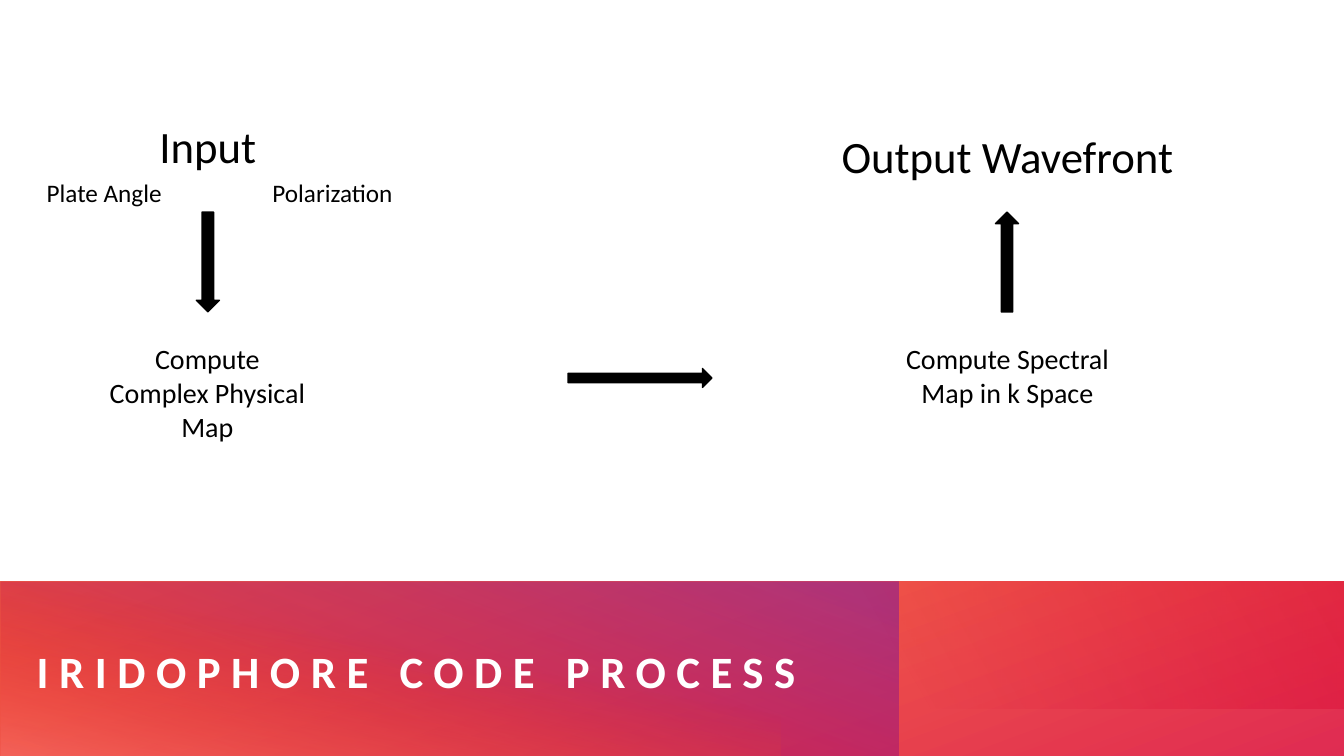
import lxml.etree
import pptx
import pptx.dml.color
import pptx.enum.shapes
import pptx.enum.text
import pptx.oxml.ns
import pptx.util

PX = 9525
RGB = pptx.dml.color.RGBColor
BLACK = RGB(0x00, 0x00, 0x00)
WHITE = RGB(0xFF, 0xFF, 0xFF)
RED = RGB(0xDA, 0x00, 0x2F)
ORANGE = RGB(0xFE, 0x4A, 0x00)
PURPLE = RGB(0x92, 0x24, 0x8E)
PEACH = RGB(0xFF, 0x90, 0x7A)
SHAPE = pptx.enum.shapes.MSO_SHAPE
ALIGN = pptx.enum.text.PP_ALIGN
ANCHOR = pptx.enum.text.MSO_ANCHOR
AUTO = pptx.enum.text.MSO_AUTO_SIZE
qn = pptx.oxml.ns.qn


def assign(obj, values):
    """Set each named attribute on an object."""
    for name, value in values.items():
        setattr(obj, name, value)


def place(s, x, y, w, h):
    """Position a shape from pixel lengths."""
    assign(s, {"left": x * PX, "top": y * PX, "width": w * PX, "height": h * PX})


def add_label(slide, text, x, y, w, h, size, align=ALIGN.CENTER):
    """Add a black wrapped text box."""
    s = slide.shapes.add_textbox(x * PX, y * PX, w * PX, h * PX)
    tf = s.text_frame
    assign(tf, {"word_wrap": True, "text": text})
    p = tf.paragraphs[0]
    p.alignment = align
    r = p.runs[0]
    assign(r.font, {"name": "Calibri", "size": pptx.util.Pt(size)})
    r.font.color.rgb = BLACK


def add_arrow(slide, kind, x, y, w, h, rotation=0):
    """Add a solid black block arrow."""
    s = slide.shapes.add_shape(kind, x * PX, y * PX, w * PX, h * PX)
    s.rotation = rotation
    s.shadow.inherit = False
    s.fill.solid()
    s.fill.fore_color.rgb = BLACK
    s.line.color.rgb = BLACK
    s.line.width = pptx.util.Pt(1)


def add_panel(slide, x, y, w, h, stops, angle, rotation=0, flip=False):
    """Add a translucent gradient panel that covers the given visible box."""
    dx = (w - h) // 2 if rotation in (90, 270) else 0
    s = slide.shapes.add_shape(SHAPE.RECTANGLE, 0, 0, PX, PX)
    place(s, x + dx, y - dx, w - 2 * dx, h + 2 * dx)
    s.rotation = rotation
    s.shadow.inherit = False
    s.fill.gradient()
    s.fill.gradient_angle = 360 - angle
    for stop, (position, color, _) in zip(s.fill.gradient_stops, stops):
        stop.position = position / 100
        stop.color.rgb = color
    spPr = s._element.spPr
    for clr, (_, _, opacity) in zip(spPr.iter(qn("a:srgbClr")), stops):
        alpha = lxml.etree.SubElement(clr, qn("a:alpha"))
        alpha.set("val", str(opacity * 1000))
    if flip:
        spPr.find(qn("a:xfrm")).set("flipH", "1")
    s.line.fill.background()


def add_banner(slide, x, y, w, h):
    """Layer the gradient banner and set the title over it."""
    add_panel(slide, x, y, w, h, [(0, RED, 83), (100, ORANGE, 74)], 250)
    add_panel(slide, x, y, 856, h, [(5, PURPLE, 68), (100, RED, 43)], 160, 90, True)
    add_panel(slide, x, y, 744, h, [(42, ORANGE, 0), (99, PEACH, 48)], 190, 270)
    add_panel(slide, x + 517, y, w - 517, 121, [(0, RED, 37), (56, RED, 0)], 330, 180)
    s = slide.shapes.title
    place(s, x + 35, y + 29, 785, 112)
    tf = s.text_frame
    assign(tf, {"text": "IRIDOPHORE CODE PROCESS", "word_wrap": True,
                "auto_size": AUTO.NONE, "vertical_anchor": ANCHOR.MIDDLE,
                "margin_left": 0, "margin_right": 0,
                "margin_top": 0, "margin_bottom": 0})
    p = tf.paragraphs[0]
    p.alignment = ALIGN.LEFT
    r = p.runs[0]
    assign(r.font, {"name": "Calibri", "size": pptx.util.Pt(32), "bold": True})
    r.font.color.rgb = WHITE
    r._r.get_or_add_rPr().set("spc", "750")
    slide.shapes._spTree.append(s._element)


def add_input(slide, x, y):
    """Add the input column with its two parameters and first step."""
    add_label(slide, "Input", x + 86, y, 154, 61, 32)
    add_label(slide, "Plate Angle", x, y + 56, 133, 38, 18, ALIGN.LEFT)
    add_label(slide, "Polarization", x + 215, y + 56, 147, 38, 18, ALIGN.LEFT)
    add_arrow(slide, SHAPE.DOWN_ARROW, x + 152, y + 94, 22, 95)
    add_label(slide, "Compute Complex Physical Map", x + 55, y + 213, 215, 74, 20)


def add_output(slide, x, y):
    """Add the output column that leads up to the wavefront."""
    add_label(slide, "Output Wavefront", x, y, 337, 61, 32)
    add_arrow(slide, SHAPE.DOWN_ARROW, x + 157, y + 84, 22, 95, 180)
    add_label(slide, "Compute Spectral Map in k Space", x + 61, y + 203, 215, 74, 20)


def main():
    """Build and save the process slide."""
    prs = pptx.Presentation()
    assign(prs, {"slide_width": 1280 * PX, "slide_height": 720 * PX})
    slide = prs.slides.add_slide(prs.slide_layouts[5])
    add_banner(slide, 0, 554, 1281, 169)
    add_input(slide, 35, 108)
    add_arrow(slide, SHAPE.RIGHT_ARROW, 541, 351, 137, 18)
    add_output(slide, 791, 118)
    prs.save("out.pptx")


if __name__ == "__main__":
    main()
